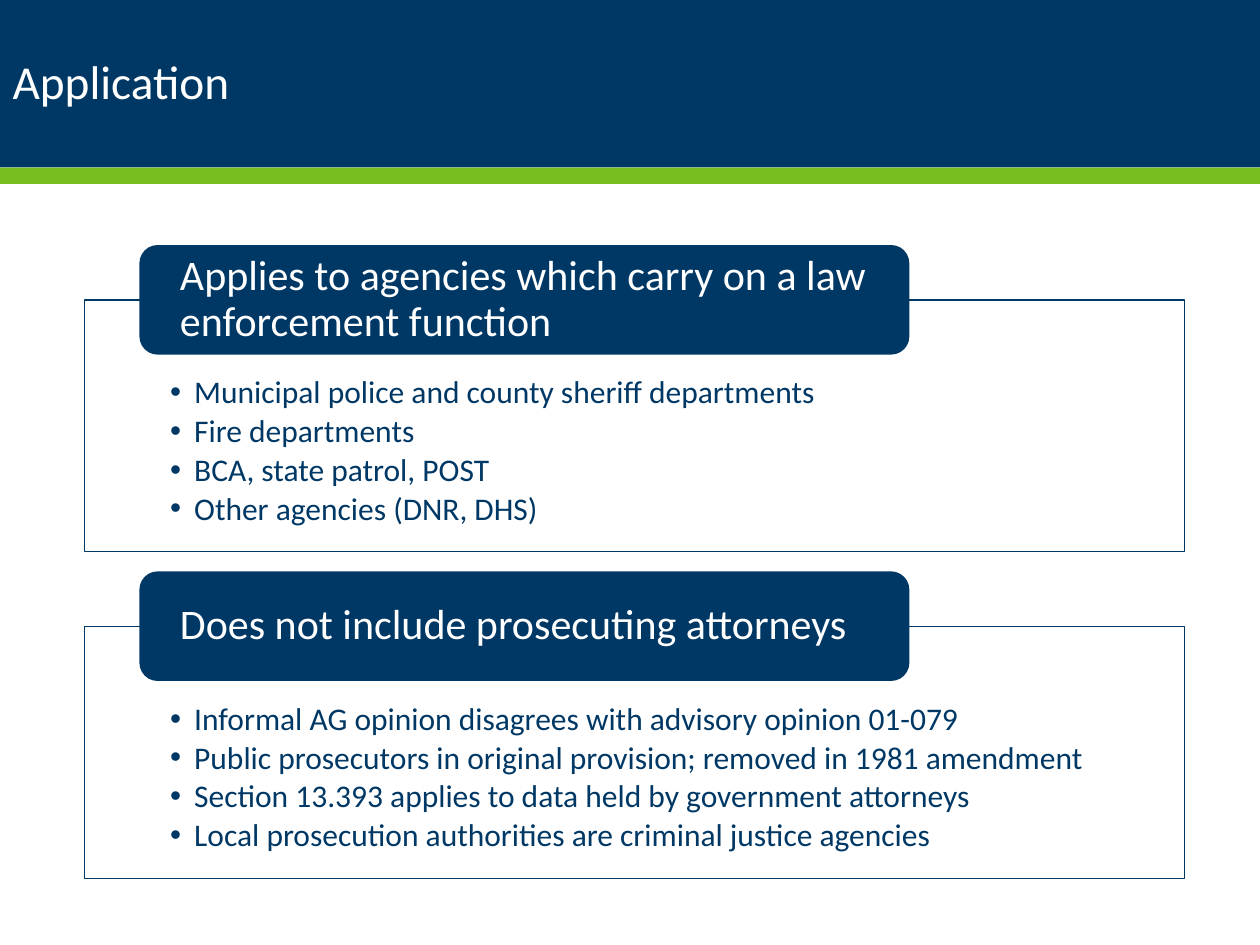
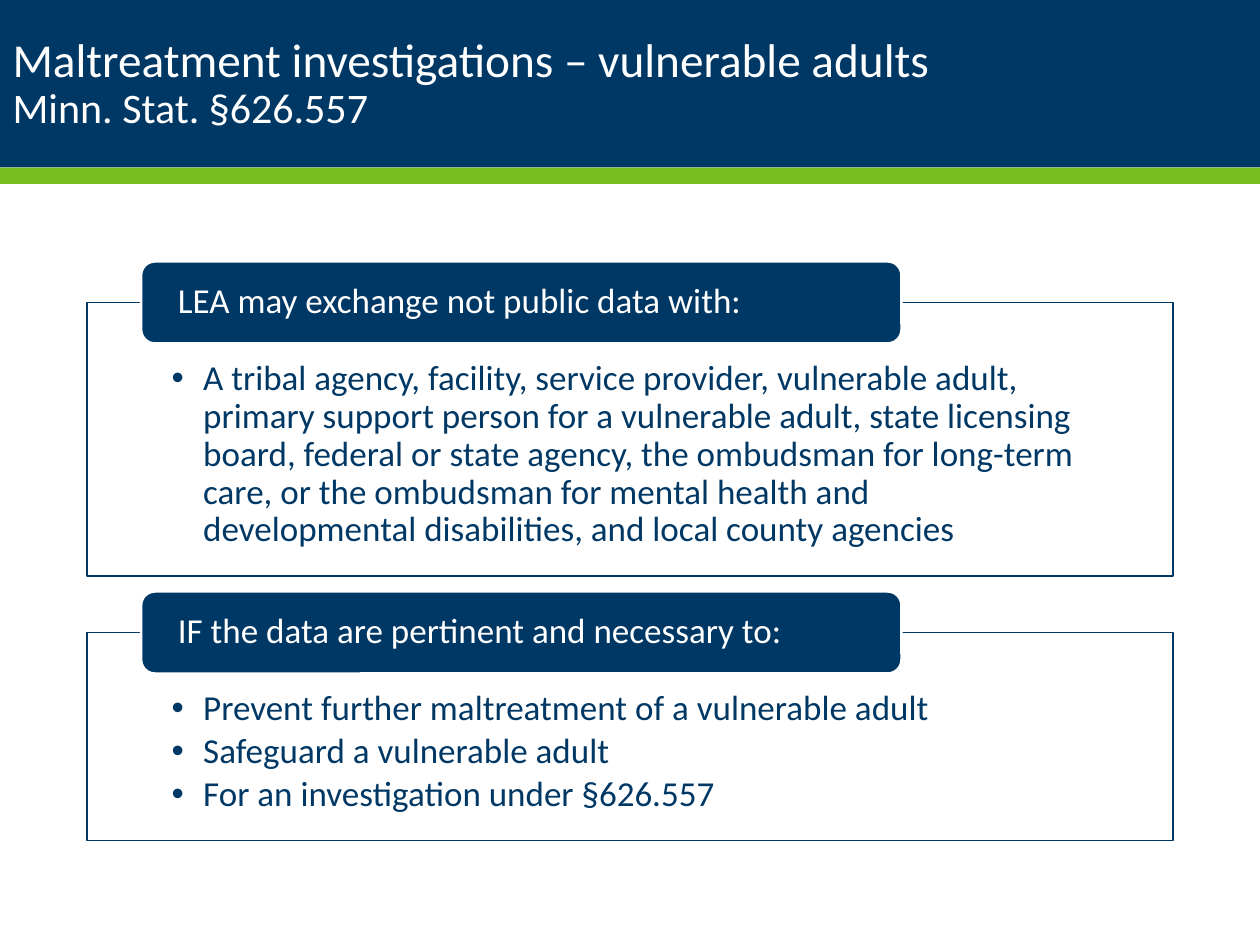
from dataclasses import dataclass

from lxml.etree import SubElement
from pptx import Presentation
from pptx.dml.color import RGBColor
from pptx.enum.shapes import MSO_SHAPE
from pptx.enum.text import MSO_ANCHOR, MSO_AUTO_SIZE, PP_ALIGN
from pptx.oxml.ns import qn
from pptx.util import Inches, Pt

# Shared look
NAVY, GREEN, WHITE = "003865", "78BE21", "FFFFFF"
FONT = "Calibri"
LINE_SPACING = 0.9
TITLE_SIZE = 27
TWO_CONTENT_LAYOUT = 3

# The slide is a grid of 100 columns by 75 rows
COLUMNS, ROWS = 100, 75
CELL = Inches(0.1)
TAB_OFFSET, TAB_SHARE, TEXT_OFFSET = 0.05, 0.7, 0.078  # shares of a panel's width


@dataclass
class Section:
    heading: str
    bullets: list[str]
    rows: float


@dataclass
class SectionStyle:
    left: float
    top: float
    columns: float
    gap: float
    tab_rows: float
    tab_inset: float
    tab_border: float
    text_top: float
    panel_border: float
    heading_size: float
    bullet_size: float
    bullet_indent: float


@dataclass
class Page:
    title_lines: list[tuple[str, float]]
    style: SectionStyle
    sections: list[Section]


PAGES = [
    Page(
        [("Application", TITLE_SIZE)],
        SectionStyle(left=6.7, top=23.8, columns=87.3, gap=5.9, tab_rows=8.7,
                     tab_inset=2.8, tab_border=0, text_top=6.1, panel_border=0.75,
                     heading_size=24, bullet_size=18, bullet_indent=1.9),
        [
            Section("Applies to agencies which carry on a law enforcement function", [
                "Municipal police and county sheriff departments",
                "Fire departments",
                "BCA, state patrol, POST",
                "Other agencies (DNR, DHS)",
            ], 20),
            Section("Does not include prosecuting attorneys", [
                "Informal AG opinion disagrees with advisory opinion 01-079",
                "Public prosecutors in original provision; removed in 1981 amendment",
                "Section 13.393 applies to data held by government attorneys",
                "Local prosecution authorities are criminal justice agencies",
            ], 20),
        ],
    ),
    Page(
        [("Maltreatment investigations – vulnerable adults", TITLE_SIZE),
         ("Minn. Stat. §626.557", 24)],
        SectionStyle(left=6.9, top=24, columns=86.2, gap=4.5, tab_rows=6.5,
                     tab_inset=2.6, tab_border=1.35, text_top=4.6, panel_border=0.85,
                     heading_size=20, bullet_size=20, bullet_indent=2.5),
        [
            Section("LEA may exchange not public data with:", [
                "A tribal agency, facility, service provider, vulnerable adult, "
                "primary support person for a vulnerable adult, state licensing "
                "board, federal or state agency, the ombudsman for long-term care, "
                "or the ombudsman for mental health and developmental disabilities, "
                "and local county agencies",
            ], 21.7),
            Section("IF the data are pertinent and necessary to:", [
                "Prevent further maltreatment of a vulnerable adult",
                "Safeguard a vulnerable adult",
                "For an investigation under §626.557",
            ], 16.5),
        ],
    ),
]


def cells(count: float) -> int:
    return round(count * CELL)


def color(hex_value: str) -> RGBColor:
    return RGBColor.from_string(hex_value)


def place(shape, left: float, top: float, columns: float, rows: float) -> None:
    shape.left, shape.top = cells(left), cells(top)
    shape.width, shape.height = cells(columns), cells(rows)


def paint(shape, fill: str, border: str = "", border_width: float = 0) -> None:
    shape.fill.solid()
    shape.fill.fore_color.rgb = color(fill)
    if border_width:
        shape.line.color.rgb = color(border)
        shape.line.width = Pt(border_width)
    else:
        shape.line.fill.background()


def add_box(slide, kind: MSO_SHAPE, left: float, top: float, columns: float, rows: float):
    box = slide.shapes.add_shape(kind, 0, 0, 0, 0)
    place(box, left, top, columns, rows)
    box.shadow.inherit = False
    return box


def prepare_frame(shape, anchor: MSO_ANCHOR, left: float, top: float, bottom: float):
    frame = shape.text_frame
    frame.word_wrap = True
    frame.auto_size = MSO_AUTO_SIZE.NONE
    frame.vertical_anchor = anchor
    frame.margin_left = frame.margin_right = cells(left)
    frame.margin_top, frame.margin_bottom = cells(top), cells(bottom)
    return frame


def format_paragraph(paragraph, space_after: float = 0) -> None:
    paragraph.alignment = PP_ALIGN.LEFT
    paragraph.line_spacing = LINE_SPACING
    paragraph.space_before = Pt(0)
    paragraph.space_after = Pt(space_after)


def add_run(paragraph, text: str, size: float, hex_value: str) -> None:
    run = paragraph.add_run()
    run.text = text
    run.font.name = FONT
    run.font.size = Pt(size)
    run.font.color.rgb = color(hex_value)


def add_master_bands(presentation, slide) -> None:
    """Put the title bands behind the placeholders of the slide master."""
    first_placeholder = presentation.slide_master.placeholders[0].element
    for number, (top, rows, fill) in enumerate([(0, 13.3, NAVY), (13.3, 1.3, GREEN)]):
        band = add_box(slide, MSO_SHAPE.RECTANGLE, 0, top, COLUMNS, rows)
        paint(band, fill)
        band.element.nvSpPr.cNvPr.set("id", str(100 + number))
        first_placeholder.addprevious(band.element)


def write_title(slide, lines: list[tuple[str, float]]) -> None:
    title = slide.shapes.title
    place(title, 0, 1.7, 86.2, 10)
    paragraph = prepare_frame(title, MSO_ANCHOR.MIDDLE, 1, 0.5, 0.5).paragraphs[0]
    format_paragraph(paragraph)
    for index, (text, size) in enumerate(lines):
        if index:
            paragraph.add_line_break()
        add_run(paragraph, text, size, WHITE)


def set_bullet(paragraph, indent: float) -> None:
    properties = paragraph._p.get_or_add_pPr()
    properties.set("marL", str(cells(indent)))
    properties.set("indent", str(-cells(indent)))
    SubElement(properties, qn("a:buChar"), char="•")


def write_panel(panel, section: Section, style: SectionStyle, top: float) -> None:
    place(panel, style.left, top, style.columns, section.rows)
    paint(panel, WHITE, NAVY, style.panel_border)
    fill_color = panel.element.spPr.find(qn("a:solidFill"))[0]
    SubElement(fill_color, qn("a:alpha"), val="90000")
    frame = prepare_frame(panel, MSO_ANCHOR.TOP, style.columns * TEXT_OFFSET,
                          style.text_top, 1.4)
    for index, text in enumerate(section.bullets):
        paragraph = frame.add_paragraph() if index else frame.paragraphs[0]
        format_paragraph(paragraph, 0.15 * style.bullet_size)
        set_bullet(paragraph, style.bullet_indent)
        add_run(paragraph, text, style.bullet_size, NAVY)


def add_tab(slide, heading: str, style: SectionStyle, panel_top: float) -> None:
    """Add a heading tab centred on the top edge of its panel."""
    tab = add_box(slide, MSO_SHAPE.ROUNDED_RECTANGLE,
                  style.left + style.columns * TAB_OFFSET,
                  panel_top - style.tab_rows / 2,
                  style.columns * TAB_SHARE, style.tab_rows)
    paint(tab, NAVY, WHITE, style.tab_border)
    frame = prepare_frame(tab, MSO_ANCHOR.MIDDLE, style.tab_inset, 0, 0)
    format_paragraph(frame.paragraphs[0])
    add_run(frame.paragraphs[0], heading, style.heading_size, WHITE)


def build_page(slide, page: Page) -> None:
    write_title(slide, page.title_lines)
    panels = [shape for shape in slide.placeholders if shape.placeholder_format.idx > 0]
    top = page.style.top
    for panel, section in zip(panels, page.sections):
        write_panel(panel, section, page.style, top)
        add_tab(slide, section.heading, page.style, top)
        top += section.rows + page.style.gap


def main() -> None:
    presentation = Presentation()
    presentation.slide_width, presentation.slide_height = cells(COLUMNS), cells(ROWS)
    layout = presentation.slide_layouts[TWO_CONTENT_LAYOUT]
    slides = [presentation.slides.add_slide(layout) for _ in PAGES]
    add_master_bands(presentation, slides[0])
    for slide, page in zip(slides, PAGES):
        build_page(slide, page)
    presentation.save("out.pptx")


if __name__ == "__main__":
    main()
